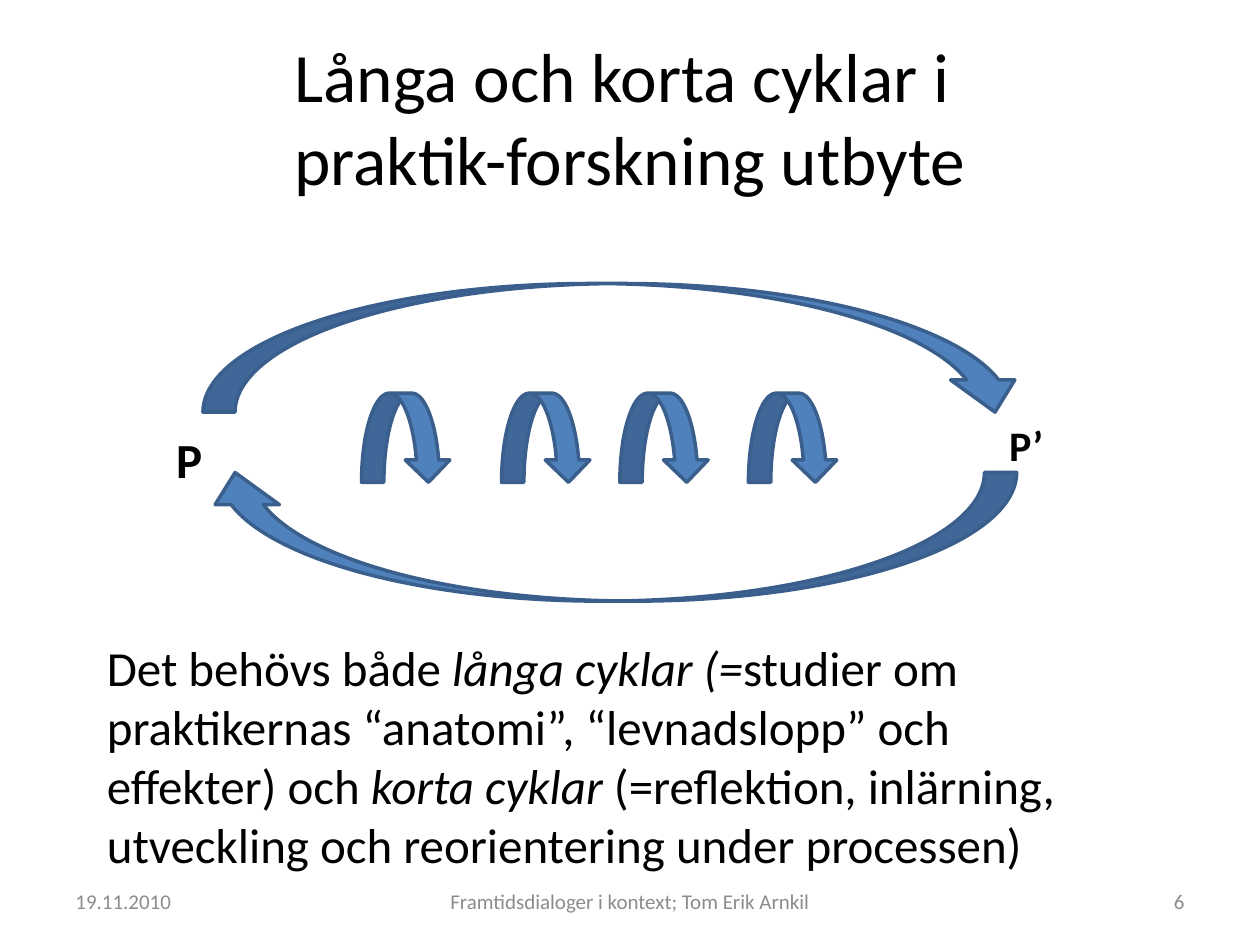
"""Build a slide on long and short cycles between practice and research."""
from dataclasses import dataclass

from pptx import Presentation
from pptx.dml.color import RGBColor
from pptx.enum.shapes import MSO_SHAPE
from pptx.enum.text import MSO_ANCHOR, PP_ALIGN
from pptx.oxml.ns import qn
from pptx.util import Pt

DOWN, UP = MSO_SHAPE.CURVED_DOWN_ARROW, MSO_SHAPE.CURVED_UP_ARROW
LEFT, CENTER, RIGHT = PP_ALIGN.LEFT, PP_ALIGN.CENTER, PP_ALIGN.RIGHT
TOP, MIDDLE = MSO_ANCHOR.TOP, MSO_ANCHOR.MIDDLE
FONT, BLACK, GRAY = "Calibri", "000000", "8C8C8C"
ARROW_FILL, ARROW_LINE = "4F81BD", "3A5F8C"


@dataclass
class Arrow:
    """A curved arrow, with lengths in points."""
    left: float
    top: float
    width: float
    height: float
    kind: MSO_SHAPE = DOWN
    flipped: bool = False


@dataclass
class Label:
    """A text box whose spans are pairs of wording and italic."""
    left: float
    top: float
    width: float
    height: float
    spans: list[tuple[str, bool]]
    size: float
    color: str = BLACK
    bold: bool = False
    align: PP_ALIGN = LEFT
    anchor: MSO_ANCHOR = TOP
    wrap: bool = True


SMALL_SIZE = 51
SMALL_LEFTS = (206.6, 286.6, 354.2, 427.7)
ARROWS = [
    Arrow(116, 162, 471, 73.5),
    Arrow(116, 270, 465, 73.5, UP, True),
    *(Arrow(left, 224.6, SMALL_SIZE, SMALL_SIZE) for left in SMALL_LEFTS),
]

FOOTER = dict(size=12, color=GRAY, anchor=MIDDLE)
LABELS = [
    Label(36, 500.5, 168, 28.75, [("19.11.2010", False)], **FOOTER),
    Label(246, 500.5, 228, 28.75, [("Framtidsdialoger i kontext; Tom Erik Arnkil", False)],
          align=CENTER, **FOOTER),
    Label(516, 500.5, 168, 28.75, [("6", False)], align=RIGHT, **FOOTER),
    Label(93.6, 242, 28, 41, [("P", False)], 28, bold=True, wrap=False),
    Label(569.5, 236, 45.5, 36, [("P’", False)], 24, bold=True),
    Label(54, 361, 581, 143, [
        ("Det behövs både ", False),
        ("långa cyklar (=", True),
        ("studier om praktikernas “anatomi”, “levnadslopp” och effekter) och ", False),
        ("korta cyklar ", True),
        ("(=reflektion, inlärning, utveckling och reorientering under processen)", False),
    ], 28),
]


def rgb(value: str) -> RGBColor:
    """Turn a hex string into a colour."""
    return RGBColor.from_string(value)


def style_font(font, size: float, color: str, bold: bool = False) -> None:
    """Set the face, size, colour and weight of a font."""
    font.name, font.size, font.bold = FONT, Pt(size), bold
    font.color.rgb = rgb(color)


def add_title(page, text: str) -> None:
    """Place and fill the title placeholder."""
    title = page.shapes.title
    title.left, title.top, title.width, title.height = Pt(36), Pt(21.6), Pt(648), Pt(90)
    frame = title.text_frame
    frame.text, frame.vertical_anchor = text, MIDDLE
    para = frame.paragraphs[0]
    para.alignment = CENTER
    style_font(para.font, 39.6, BLACK)


def add_arrow(page, arrow: Arrow) -> None:
    """Draw one curved arrow."""
    shape = page.shapes.add_shape(arrow.kind, Pt(arrow.left), Pt(arrow.top),
                                  Pt(arrow.width), Pt(arrow.height))
    shape.shadow.inherit = False
    shape.fill.solid()
    shape.fill.fore_color.rgb = rgb(ARROW_FILL)
    shape.line.color.rgb = rgb(ARROW_LINE)
    shape.line.width = Pt(2)
    if arrow.flipped:
        shape.element.spPr.find(qn("a:xfrm")).set("flipH", "1")


def add_label(page, label: Label) -> None:
    """Write one text box."""
    box = page.shapes.add_textbox(Pt(label.left), Pt(label.top),
                                  Pt(label.width), Pt(label.height))
    frame = box.text_frame
    frame.word_wrap, frame.vertical_anchor = label.wrap, label.anchor
    para = frame.paragraphs[0]
    para.alignment = label.align
    style_font(para.font, label.size, label.color, label.bold)
    for text, italic in label.spans:
        span = para.add_run()
        span.text = text
        if italic:
            span.font.italic = True


def main() -> None:
    """Build and save the deck."""
    deck = Presentation()
    deck.slide_width, deck.slide_height = Pt(720), Pt(540)
    page = deck.slides.add_slide(deck.slide_layouts.get_by_name("Title Only"))
    add_title(page, "Långa och korta cyklar i \vpraktik-forskning utbyte")
    for arrow in ARROWS:
        add_arrow(page, arrow)
    for label in LABELS:
        add_label(page, label)
    deck.save("out.pptx")


if __name__ == "__main__":
    main()
